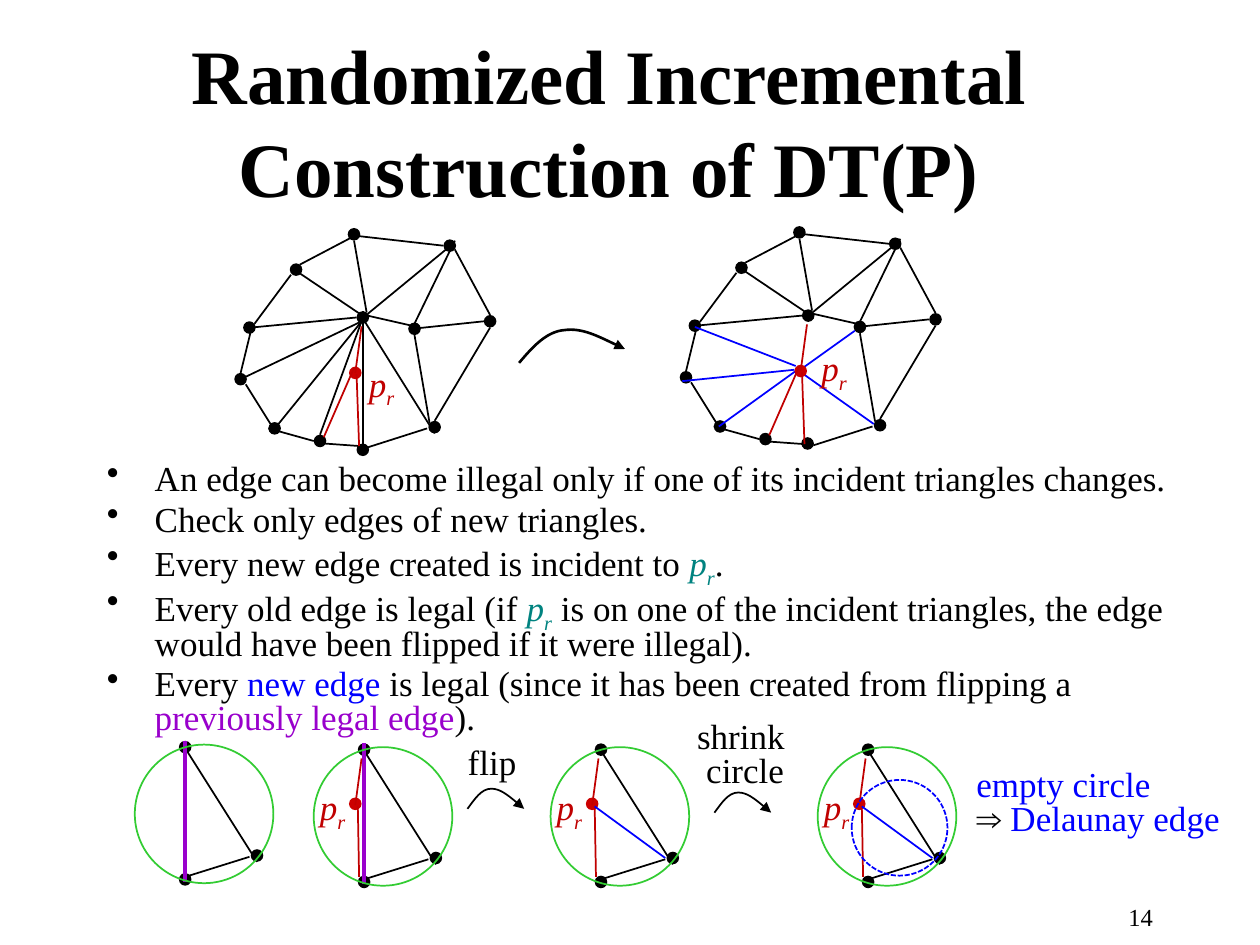
from itertools import chain
from lxml.etree import SubElement
from pptx import Presentation
from pptx.dml.color import RGBColor as RGB
from pptx.enum.dml import MSO_LINE_DASH_STYLE as DASH
from pptx.enum.shapes import MSO_CONNECTOR as CONN, MSO_SHAPE as SHAPE
from pptx.enum.text import MSO_ANCHOR as ANCHOR, MSO_AUTO_SIZE as FIT, PP_ALIGN as ALIGN
from pptx.oxml.ns import qn
from pptx.util import Inches, Pt

SLIDE_W, SLIDE_H = Inches(10), Inches(7.5)
COLS = 1000
DOT = 10

THEME = {
    "font": "Times New Roman",
    "size": {"title": Pt(44), "text": Pt(20), "number": Pt(14)},
    "color": {
        "ink": RGB(0, 0, 0), "point": RGB(0xCC, 0, 0), "red": RGB(0xC0, 0, 0),
        "blue": RGB(0, 0, 0xFF), "teal": RGB(0, 0x83, 0x80),
        "purple": RGB(0x99, 0, 0xCC), "green": RGB(0x33, 0xCC, 0x33),
    },
}

MESH_DOTS = [(213, 335), (186, 296), (193, 255), (230, 209), (283, 247), (324, 256),
             (276, 181), (352, 190), (340, 334), (249, 345), (384, 250)]
MESH_EDGES = [
    (278, 189, 238, 210), (202, 257, 231, 218), (191, 296, 200, 259), (215, 337, 195, 305),
    (249, 350, 213, 340), (285, 354, 257, 352), (339, 340, 292, 355), (329, 266, 341, 336),
    (285, 249, 329, 259), (238, 217, 287, 250), (281, 191, 291, 248), (354, 198, 292, 249),
    (361, 191, 327, 261), (281, 187, 352, 195), (361, 198, 389, 250), (389, 260, 345, 334),
    (384, 255, 327, 261), (199, 260, 283, 252)]
FAN_EDGES = [(193, 300, 285, 256), (219, 339, 292, 249), (254, 345, 287, 255),
             (288, 359, 288, 247), (345, 344, 290, 256)]
FLIPPED_EDGES = [(198, 261, 278, 292), (188, 304, 277, 295), (340, 338, 285, 299),
                 (325, 264, 283, 294), (217, 340, 278, 296)]
SPOKES = [(282, 296, 287, 259), (257, 347, 281, 292), (285, 354, 283, 297)]

TRIANGLE_DOTS = [(35, -3), (92, 83), (35, 102)]
TRIANGLE_EDGES = [(91, 89, 43, 104), (97, 93, 42, 6)]
OLD_EDGE = [(40, 109, 40, -3)]
CIRCLE_SPOKES = [(33, 46, 38, 9), (36, 103, 35, 47)]
NEW_EDGE = [(91, 88, 35, 47)]

BIG_ARC = [(0, 0), (11, -13), (22, -25), (36, -26), (50, -28), (67, -19), (84, -11)]
SMALL_ARC = [(0, 0), (6, -8), (11, -16), (19, -16), (26, -16), (36, -8), (45, 0)]

POINT_R = [("p", "red", {"italic": True}), ("r", "red", {"italic": True, "sub": True})]
TEAL_R = [("p", "teal", {"italic": True}), ("r", "teal", {"italic": True, "sub": True})]
BULLETS = [
    [("An edge can become illegal only if one of its incident triangles changes.",)],
    [("Check only edges of new triangles.",)],
    [("Every new edge created is incident to ",), *TEAL_R, (".",)],
    [("Every old edge is legal (if ",), *TEAL_R,
     (" is on one of the incident triangles, the edge would have been flipped if it were illegal).",)],
    [("Every ",), ("new edge ", "blue"),
     ("is legal (since it has been created from flipping a ",),
     ("previously legal edge", "purple"), (").",)],
]


def grid(*values):
    return [round(v * SLIDE_W / COLS) for v in values]


def apply(obj, fmt):
    for key, value in fmt.items():
        setattr(obj, key, value)


def stroke(line, color, width):
    line.color.rgb = THEME["color"][color]
    line.width = Pt(width)


def add_oval(s, x, y, d, fill=None, line=None, dash=None):
    sp = s.shapes.add_shape(SHAPE.OVAL, *grid(x, y, d, d))
    sp.shadow.inherit = False
    if fill:
        sp.fill.solid()
        sp.fill.fore_color.rgb = THEME["color"][fill]
        sp.line.fill.background()
    else:
        sp.fill.background()
        stroke(sp.line, line, 1)
        sp.line.dash_style = dash


def add_dots(s, dots, dx, dy, color="ink"):
    for x, y in dots:
        add_oval(s, x + dx, y + dy, DOT, fill=color)


def add_edges(s, edges, dx, dy, color="ink", width=1):
    for x1, y1, x2, y2 in edges:
        c = s.shapes.add_connector(CONN.STRAIGHT, *grid(x1 + dx, y1 + dy, x2 + dx, y2 + dy))
        stroke(c.line, color, width)
        SubElement(c._element.spPr, qn("a:effectLst"))


def add_arc(s, x, y, points, width=1):
    pts = [tuple(grid(x + px, y + py)) for px, py in points]
    fb = s.shapes.build_freeform(*pts[0])
    fb.add_line_segments(pts[1:], close=False)
    sp = fb.convert_to_shape()
    sp.shadow.inherit = False
    sp.fill.background()
    stroke(sp.line, "ink", width)
    SubElement(sp.line._get_or_add_ln(), qn("a:tailEnd"), type="triangle")
    path = next(sp._element.iter(qn("a:path")))
    steps = path.findall(qn("a:lnTo"))
    for i in range(0, len(steps), 3):
        curve = SubElement(path, qn("a:cubicBezTo"))
        for step in steps[i:i + 3]:
            curve.append(step[0])
            path.remove(step)


def add_run(p, text, color="ink", fmt=None, size="text"):
    fmt = dict(fmt or {})
    sub = fmt.pop("sub", False)
    for i, part in enumerate(text.split("\n")):
        if i:
            p.add_line_break()
        if part:
            r = p.add_run()
            r.text = part
            apply(r.font, {"name": THEME["font"], "size": THEME["size"][size], **fmt})
            r.font.color.rgb = THEME["color"][color]
            if sub:
                r._r.get_or_add_rPr().set("baseline", "-25000")


def add_text(s, box, paragraphs, size="text", para=None, wrap=True, anchor=ANCHOR.TOP, bullet=False):
    tf = s.shapes.add_textbox(*grid(*box)).text_frame
    apply(tf, {"word_wrap": wrap, "vertical_anchor": anchor,
               "auto_size": FIT.NONE if wrap else FIT.SHAPE_TO_FIT_TEXT})
    for i, runs in enumerate(paragraphs):
        p = tf.add_paragraph() if i else tf.paragraphs[0]
        apply(p, para or {})
        for run in runs:
            add_run(p, *run, size=size)
        if bullet:
            pPr = p._p.get_or_add_pPr()
            indent = Inches(0.38)
            pPr.set("marL", str(indent))
            pPr.set("indent", str(-indent))
            SubElement(pPr, qn("a:buChar"), char="•")


def add_point_label(s, x, y):
    add_text(s, (x, y, 42, 37), [POINT_R], wrap=False,
             para={"line_spacing": 0.8, "space_before": Pt(4)})


def add_mesh(s, dx, dy, bottom, inner, color):
    add_dots(s, chain(MESH_DOTS, [bottom]), dx, dy)
    add_edges(s, MESH_EDGES, dx, dy)
    add_edges(s, inner, dx, dy, color)
    add_dots(s, [(277, 291)], dx, dy, "point")
    add_edges(s, SPOKES, dx, dy, "red")


def add_circle_step(s, x, y, point=True, old=False, new=False):
    add_dots(s, TRIANGLE_DOTS, x, y)
    add_edges(s, TRIANGLE_EDGES, x, y)
    if old:
        add_edges(s, OLD_EDGE, x, y, "purple", 2.5)
    if point:
        add_dots(s, [(28, 40)], x, y, "point")
        add_edges(s, CIRCLE_SPOKES, x, y, "red")
        add_point_label(s, x - 5, y + 29)
    add_oval(s, x, y, 110, line="green")
    if new:
        add_edges(s, NEW_EDGE, x, y, "blue")


def main():
    prs = Presentation()
    apply(prs, {"slide_width": SLIDE_W, "slide_height": SLIDE_H})
    s = prs.slides.add_slide(prs.slide_layouts[6])
    center, tight = {"alignment": ALIGN.CENTER}, {"line_spacing": 0.8}

    add_text(s, (851, 711, 74, 22), [[("14",)]], "number", {"alignment": ALIGN.RIGHT})
    add_text(s, (71, 33, 825, 125),
             [[("Randomized Incremental Construction of DT(P)", "ink", {"bold": True})]],
             "title", center, anchor=ANCHOR.MIDDLE)
    add_text(s, (75, 364, 873, 300), BULLETS, para={**tight, "space_before": Pt(4)}, bullet=True)

    add_mesh(s, 0, 0, (283, 352), FAN_EDGES, "ink")
    add_mesh(s, 353.5, -1.5, (282.5, 348.5), FLIPPED_EDGES, "blue")
    add_arc(s, 412, 288, BIG_ARC, 1.5)
    add_point_label(s, 283, 286)
    add_point_label(s, 642, 274)

    add_circle_step(s, 107, 591, point=False, old=True)
    add_circle_step(s, 249, 593, old=True)
    add_circle_step(s, 437, 593, new=True)
    add_circle_step(s, 649, 593, new=True)
    add_oval(s, 676, 619, 76, line="blue", dash=DASH.SQUARE_DOT)

    add_arc(s, 371, 642, SMALL_ARC)
    add_text(s, (361, 583, 59, 44), [[("flip",)]], para=center, wrap=False)
    add_arc(s, 567, 645, SMALL_ARC)
    add_text(s, (543, 569, 90, 64), [[("shrink\n circle",)]], para={**center, **tight}, wrap=False)
    add_text(s, (765, 607, 221, 64),
             [[("empty circle\n", "blue"), ("⇒ ",), ("Delaunay edge", "blue")]], para=tight)
    prs.save("out.pptx")


if __name__ == "__main__":
    main()
